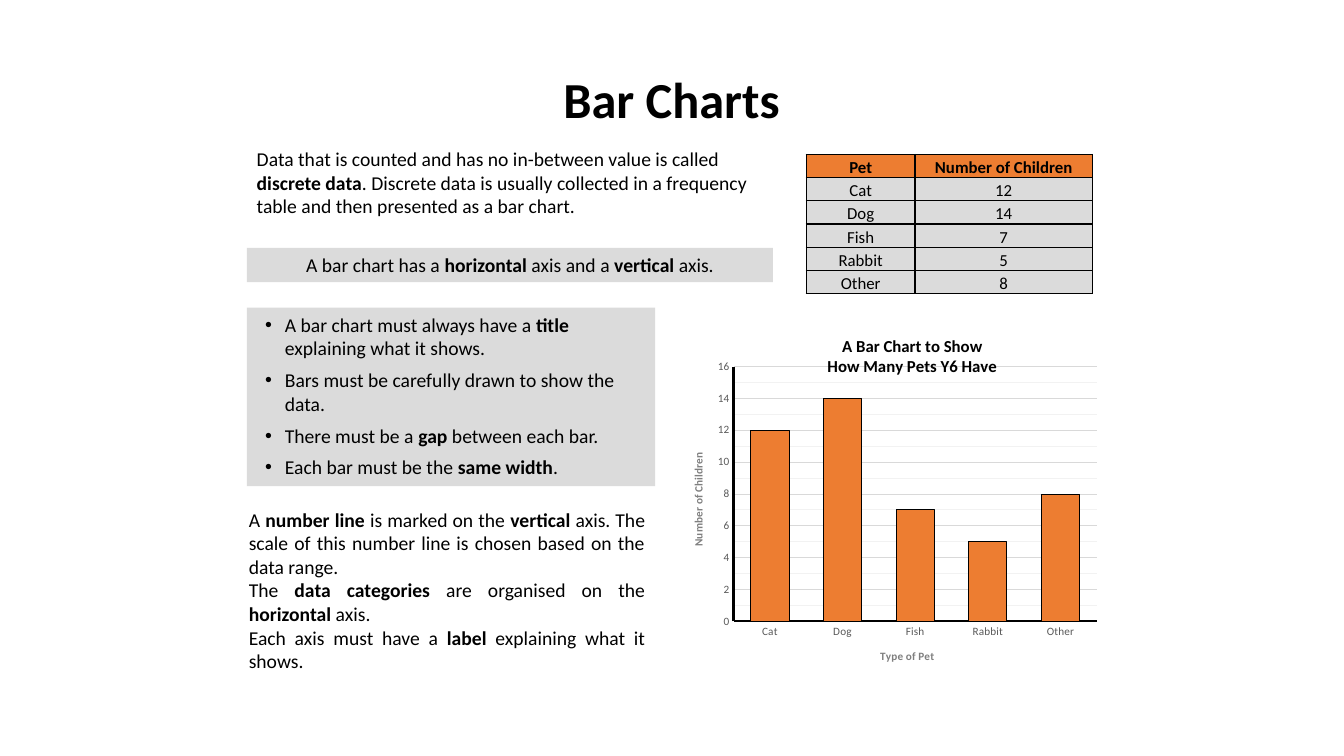
from lxml import etree
from pptx import Presentation
from pptx.chart.data import CategoryChartData
from pptx.dml.color import RGBColor
from pptx.enum.chart import XL_CHART_TYPE as ChartType, XL_TICK_MARK as TickMark
from pptx.enum.shapes import MSO_SHAPE as Shape
from pptx.enum.text import MSO_ANCHOR as Anchor, PP_ALIGN as Align
from pptx.oxml import parse_xml
from pptx.oxml.ns import nsdecls, qn
from pptx.util import Cm, Pt

COLORS = {
    "text": "000000", "panel": "DBDBDB", "accent": "ED7D31", "tick": "595959",
    "axis_title": "7F7F7F", "grid": "D9D9D9", "minor_grid": "F2F2F2",
}
FONT = "Calibri"
PETS = {"Cat": 12, "Dog": 14, "Fish": 7, "Rabbit": 5, "Other": 8}
INTRO = ["Data that is counted and has no in-between value is called **discrete data**. "
         "Discrete data is usually collected in a frequency table and then presented "
         "as a bar chart."]
AXES = ["A bar chart has a **horizontal** axis and a **vertical** axis."]
RULES = [
    "A bar chart must always have a **title** explaining what it shows.",
    "Bars must be carefully drawn to show the data.",
    "There must be a **gap** between each bar.",
    "Each bar must be the **same width**.",
]
LABELS = [
    "A **number line **is marked on the **vertical** axis. The scale of this number line "
    "is chosen based on the data range.",
    "The **data categories **are organised on the **horizontal** axis.",
    "Each axis must have a **label **explaining what it shows.",
]


def color(name):
    return RGBColor.from_string(COLORS[name])


def style_font(font, size, name="text", bold=False):
    font.name, font.size, font.bold = FONT, Pt(size), bold
    font.color.rgb = color(name)


def style_line(line, name, width):
    line.color.rgb = color(name)
    line.width = Pt(width)


def line_xml(tag, name, width):
    return (f'<a:{tag} {nsdecls("a")} w="{Pt(width)}"><a:solidFill>'
            f'<a:srgbClr val="{COLORS[name]}"/></a:solidFill></a:{tag}>')


def write(frame, paragraphs, size=14, name="text", bold=False, align=Align.LEFT,
          after=0, spacing=None, bullet=False):
    """Fill a text frame; parts between double asterisks are bold."""
    for index, text in enumerate(paragraphs):
        paragraph = frame.add_paragraph() if index else frame.paragraphs[0]
        paragraph.alignment = align
        paragraph.space_after = Pt(after)
        if spacing:
            paragraph.line_spacing = spacing
        if bullet:
            properties = paragraph._p.get_or_add_pPr()
            properties.set("marL", str(Cm(0.71)))
            properties.set("indent", str(-Cm(0.5)))
            etree.SubElement(properties, qn("a:buFont")).set("typeface", "Arial")
            etree.SubElement(properties, qn("a:buChar")).set("char", "•")
        for part, piece in enumerate(text.split("**")):
            if piece:
                run = paragraph.add_run()
                run.text = piece
                style_font(run.font, size, name, bold or part % 2 == 1)


def add_text(slide, box, paragraphs, fill=None, **text_format):
    lengths = [Cm(value) for value in box]
    if fill:
        shape = slide.shapes.add_shape(Shape.RECTANGLE, *lengths)
        shape.shadow.inherit = False
        shape.fill.solid()
        shape.fill.fore_color.rgb = color(fill)
        shape.line.fill.background()
    else:
        shape = slide.shapes.add_textbox(*lengths)
    shape.text_frame.word_wrap = True
    shape.text_frame.vertical_anchor = Anchor.TOP
    write(shape.text_frame, paragraphs, **text_format)


def add_notes_column(slide, left, top):
    """Place the explanations, from the introduction down to the axis labels."""
    add_text(slide, (left, top, 13.06, 2.06), INTRO, after=6)
    add_text(slide, (left, top + 2.67, 13.26, 0.86), AXES, fill="panel",
             align=Align.CENTER)
    add_text(slide, (left, top + 4.17, 10.29, 4.5), RULES, fill="panel", after=6,
             bullet=True)
    add_text(slide, (left - 0.2, top + 9.09, 10.49, 4.45), LABELS, align=Align.JUSTIFY)


def style_cell(cell, text, header):
    cell.margin_top = cell.margin_bottom = 0
    cell.margin_left = cell.margin_right = Cm(0.2)
    cell.vertical_anchor = Anchor.MIDDLE
    write(cell.text_frame, [text], size=12, bold=header, align=Align.CENTER, spacing=1.15)
    properties = cell._tc.get_or_add_tcPr()
    for side in ("lnL", "lnR", "lnT", "lnB"):
        properties.append(parse_xml(line_xml(side, "text", 1)))
    cell.fill.solid()
    cell.fill.fore_color.rgb = color("accent" if header else "panel")


def add_pet_table(slide, left, top, widths, row_height):
    rows = [("Pet", "Number of Children"), *PETS.items()]
    table = slide.shapes.add_table(
        len(rows), len(widths), Cm(left), Cm(top), Cm(sum(widths)),
        Cm(row_height * len(rows))).table
    for column, width in zip(table.columns, widths):
        column.width = Cm(width)
    for index, values in enumerate(rows):
        table.rows[index].height = Cm(row_height)
        for cell, value in zip(table.rows[index].cells, values):
            style_cell(cell, str(value), header=index == 0)


def set_layout(element, position, **fractions):
    """Place a chart part by fractions of the chart area."""
    for old in element.findall(qn("c:layout")):
        element.remove(old)
    modes = '<c:layoutTarget val="inner"/>' if "w" in fractions else ""
    modes += '<c:xMode val="edge"/><c:yMode val="edge"/>'
    values = "".join(f'<c:{key} val="{value}"/>' for key, value in fractions.items())
    element.insert(position, parse_xml(
        f'<c:layout {nsdecls("c")}><c:manualLayout>{modes}{values}'
        '</c:manualLayout></c:layout>'))


def style_axis(axis, title, width):
    axis.major_tick_mark = axis.minor_tick_mark = TickMark.NONE
    style_font(axis.tick_labels.font, 8, "tick")
    style_line(axis.format.line, "text", width)
    write(axis.axis_title.text_frame, [title], size=8, name="axis_title", bold=True)


def add_pet_chart(slide, box):
    data = CategoryChartData()
    data.categories = list(PETS)
    data.add_series("Number of Children", list(PETS.values()))
    chart = slide.shapes.add_chart(
        ChartType.COLUMN_CLUSTERED, *[Cm(value) for value in box], data).chart
    style_font(chart.font, 10)
    chart.has_legend = False
    write(chart.chart_title.text_frame, ["A Bar Chart to Show", "How Many Pets Y6 Have"],
          size=12, bold=True, align=Align.CENTER)
    set_layout(chart.chart_title._element, 1, x=0.34, y=0.03)
    plot_area = chart.plots[0]._element.getparent()
    set_layout(plot_area, 0, x=0.13, y=0.13, w=0.84, h=0.72)

    style_axis(chart.category_axis, "Type of Pet", 1.5)
    values = chart.value_axis
    style_axis(values, "Number of Children", 1.75)
    values.minimum_scale, values.maximum_scale = 0, 16
    values.major_unit, values.minor_unit = 2, 1
    style_line(values.major_gridlines.format.line, "grid", 0.75)
    values.has_minor_gridlines = True
    minor_gridlines = plot_area.find(".//" + qn("c:minorGridlines"))
    minor_gridlines.append(parse_xml(
        f'<c:spPr {nsdecls("c")}>{line_xml("ln", "minor_grid", 0.75)}</c:spPr>'))

    plot = chart.plots[0]
    plot.gap_width = 90
    plot.vary_by_categories = False
    bars = plot.series[0].format
    bars.fill.solid()
    bars.fill.fore_color.rgb = color("accent")
    style_line(bars.line, "text", 0.75)


def main():
    presentation = Presentation()
    presentation.slide_width, presentation.slide_height = Cm(33.87), Cm(19.05)
    slide = presentation.slides.add_slide(presentation.slide_layouts[6])
    add_notes_column(slide, 6.22, 3.58)
    add_pet_table(slide, 20.32, 3.89, (2.74, 4.47), 0.58)
    add_pet_chart(slide, (17.07, 8.08, 10.9, 8.92))
    add_text(slide, (6.32, 1.6, 21.21, 1.8), ["Bar Charts"], size=36, bold=True,
             align=Align.CENTER)
    presentation.save("out.pptx")


if __name__ == "__main__":
    main()
